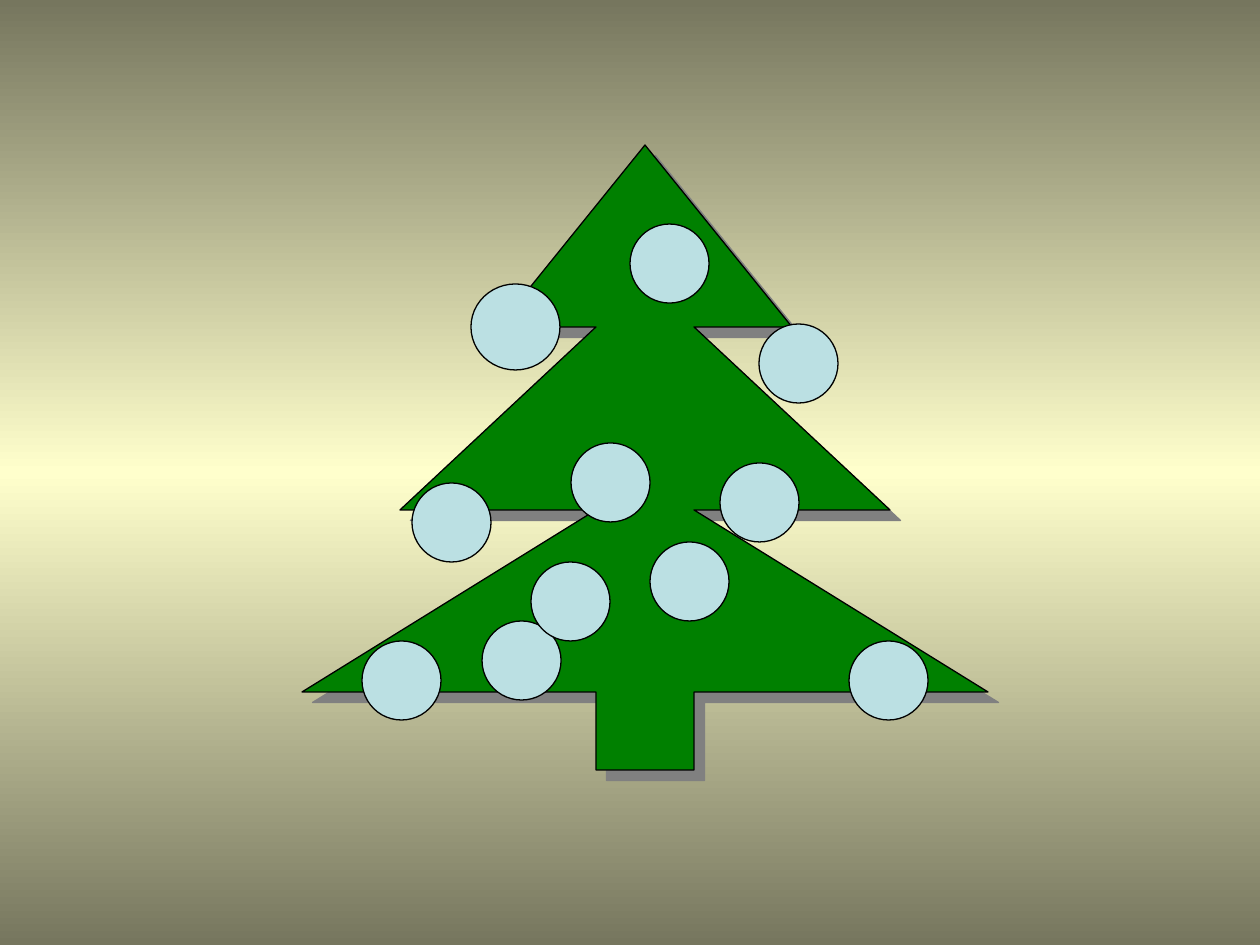
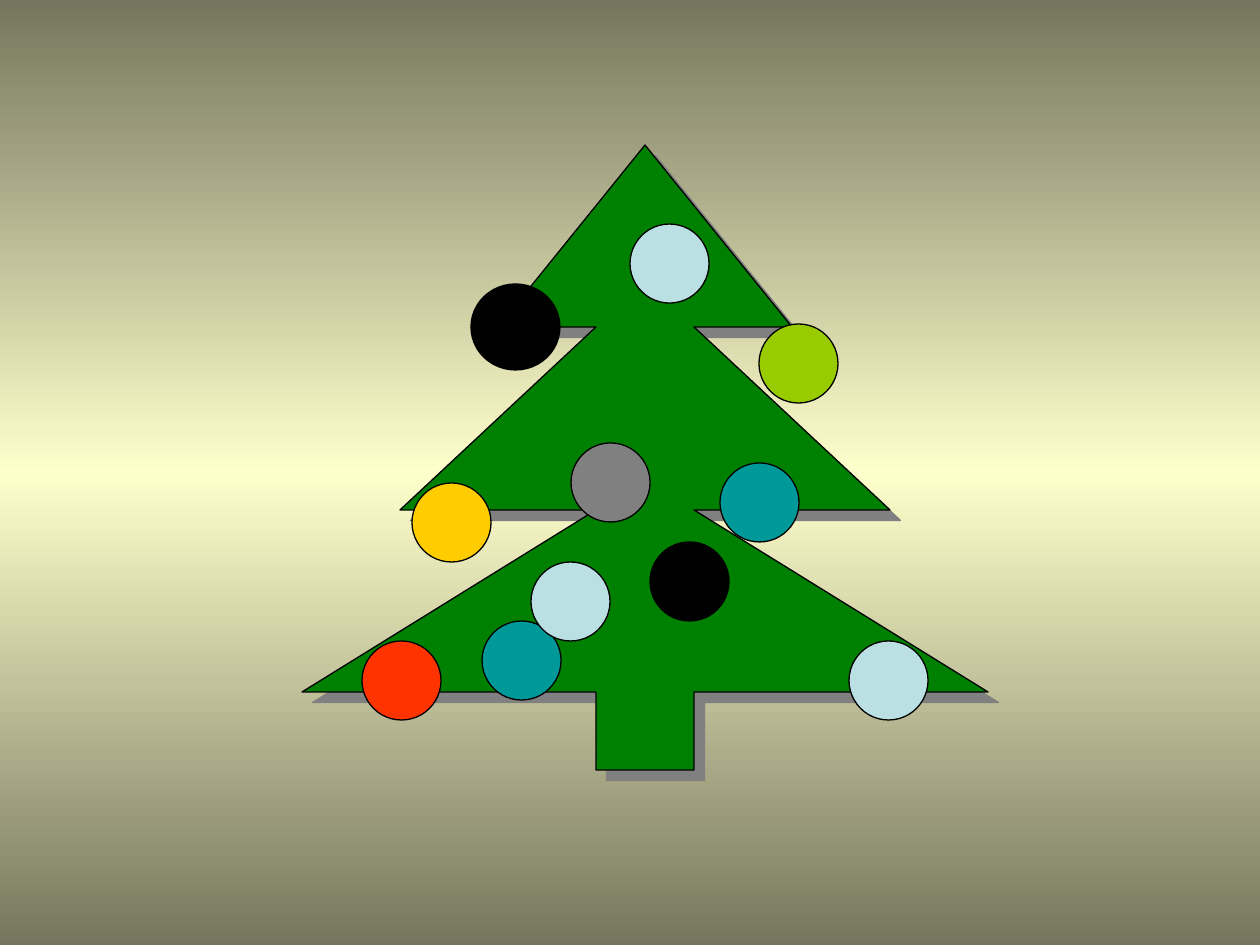
from dataclasses import dataclass

from lxml import etree
from pptx import Presentation
from pptx.dml.color import RGBColor
from pptx.enum.shapes import MSO_SHAPE
from pptx.oxml.ns import qn
from pptx.util import Emu, Pt

OVAL = MSO_SHAPE.OVAL
EMU_PER_PX = 914400 / 126
BLANK_LAYOUT = 6


@dataclass(frozen=True)
class Theme:
    dusk: str = "76765E"
    glow: str = "FFFFCC"
    tree: str = "008000"
    outline: str = "000000"
    shadow: str = "808080"
    pale: str = "BBE0E3"
    black: str = "000000"
    lime: str = "99CC00"
    gold: str = "FFCC00"
    grey: str = "808080"
    teal: str = "009999"
    red: str = "FF3300"
    outline_pt: float = 0.75
    shadow_pt: float = 8.5
    shadow_degrees: int = 45


@dataclass(frozen=True)
class Bauble:
    left: int
    top: int
    color: str
    width: int = 79
    height: int = 79


THEME = Theme()
SLIDE_WIDTH, SLIDE_HEIGHT = 1260, 945

TREE_AXIS = 645
TRUNK_HALF = 49
TIP_Y, TRUNK_BASE_Y = 145, 770
# Each tier: bottom edge and half width, which grows by two trunk widths.
TIERS = [(y, TRUNK_HALF * factor) for y, factor in ((327, 3), (510, 5), (692, 7))]

# Colours are those of the decorated tree; the plain tree has pale baubles only.
BAUBLES = [
    Bauble(471, 284, THEME.black, 89, 86),
    Bauble(759, 324, THEME.lime),
    Bauble(412, 483, THEME.gold),
    Bauble(571, 443, THEME.grey),
    Bauble(630, 224, THEME.pale),
    Bauble(720, 463, THEME.teal),
    Bauble(849, 641, THEME.pale),
    Bauble(482, 621, THEME.teal),
    Bauble(362, 641, THEME.red),
    Bauble(650, 542, THEME.black),
    Bauble(531, 562, THEME.pale),
]


def px(length: int) -> Emu:
    return Emu(round(length * EMU_PER_PX))


def paint(shape, color: str) -> None:
    """Give a shape a flat fill, the shared outline and no shadow."""
    shape.fill.solid()
    shape.fill.fore_color.rgb = RGBColor.from_string(color)
    shape.line.color.rgb = RGBColor.from_string(THEME.outline)
    shape.line.width = Pt(THEME.outline_pt)
    shape.shadow.inherit = False


def set_background(master) -> None:
    """Fade from dusk to a glowing middle and back, on every slide."""
    fill = master.background.fill
    fill.gradient()
    fill.gradient_angle = 270
    stops = master.element.find(".//" + qn("a:gsLst"))
    for stop in list(stops):
        stops.remove(stop)
    for percent, color in ((0, THEME.dusk), (50, THEME.glow), (100, THEME.dusk)):
        stop = etree.SubElement(stops, qn("a:gs"), pos=str(percent * 1000))
        etree.SubElement(stop, qn("a:srgbClr"), val=color)


def add_hard_shadow(shape) -> None:
    effects = shape.element.spPr.find(qn("a:effectLst"))
    shadow = etree.SubElement(
        effects, qn("a:outerShdw"), blurRad="0", dist=str(Pt(THEME.shadow_pt)),
        dir=str(THEME.shadow_degrees * 60000), algn="ctr", rotWithShape="0")
    etree.SubElement(shadow, qn("a:srgbClr"), val=THEME.shadow)


def tree_outline() -> list[tuple[int, int]]:
    """Run down the right side from the tip, then up its mirror image."""
    side = []
    for bottom, half_width in TIERS:
        side += [(half_width, bottom), (TRUNK_HALF, bottom)]
    side.append((TRUNK_HALF, TRUNK_BASE_Y))
    right = [(TREE_AXIS + x, y) for x, y in side]
    left = [(TREE_AXIS - x, y) for x, y in reversed(side)]
    return [(TREE_AXIS, TIP_Y)] + right + left


def add_tree(slide) -> None:
    tip, *corners = tree_outline()
    builder = slide.shapes.build_freeform(*tip, scale=EMU_PER_PX)
    builder.add_line_segments(corners, close=True)
    tree = builder.convert_to_shape()
    paint(tree, THEME.tree)
    add_hard_shadow(tree)


def add_bauble(slide, bauble: Bauble, color: str) -> None:
    ball = slide.shapes.add_shape(
        OVAL, px(bauble.left), px(bauble.top), px(bauble.width), px(bauble.height))
    paint(ball, color)


def add_tree_slide(prs, colorful: bool) -> None:
    slide = prs.slides.add_slide(prs.slide_layouts[BLANK_LAYOUT])
    add_tree(slide)
    for bauble in BAUBLES:
        add_bauble(slide, bauble, bauble.color if colorful else THEME.pale)


def main() -> None:
    prs = Presentation()
    prs.slide_width, prs.slide_height = px(SLIDE_WIDTH), px(SLIDE_HEIGHT)
    set_background(prs.slide_master)
    for colorful in (False, True):
        add_tree_slide(prs, colorful)
    prs.save("out.pptx")


if __name__ == "__main__":
    main()
